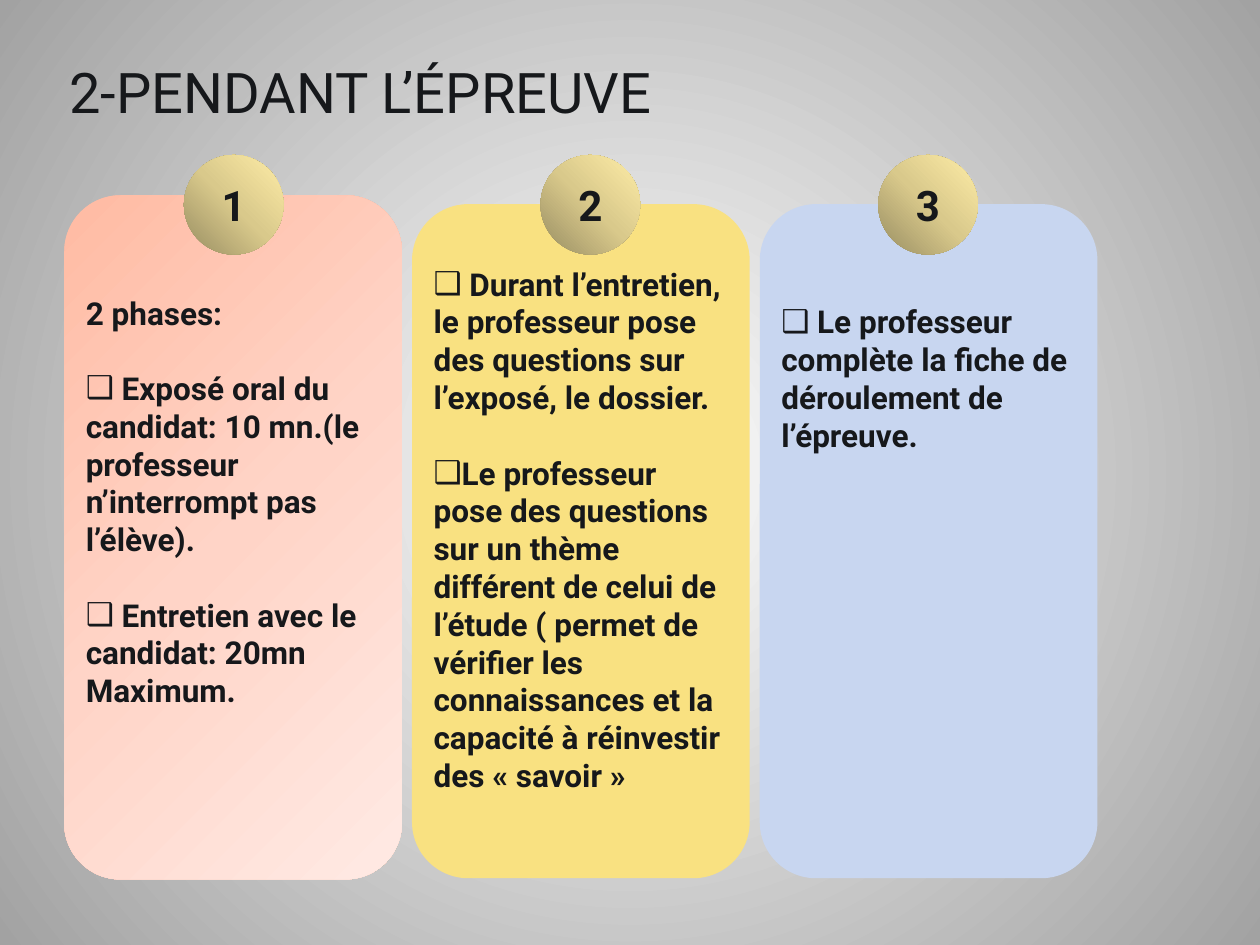
from dataclasses import dataclass
from lxml.etree import SubElement as Sub
from pptx import Presentation
from pptx.dml.color import RGBColor as Rgb
from pptx.enum.shapes import MSO_SHAPE as Kind
from pptx.enum.text import MSO_ANCHOR as Anchor, MSO_AUTO_SIZE as Fit, PP_ALIGN as Align
from pptx.oxml import parse_xml as to_xml
from pptx.oxml.ns import nsdecls, qn
from pptx.util import Inches, Pt


@dataclass(frozen=True)
class Theme:
    font: str = "Roboto"
    ink: str = "16181B"
    pink: tuple = ((0, "FFBBA3"), (50, "FFD4C7"), (100, "FFEAE4"))
    gold: tuple = ((0, "988D62"), (50, "D9C98B"), (100, "FFEDA7"))
    back: tuple = ((0, "FFFFFF", 100), (100, "A2A2A2", 59))
    sand: str = "F9E181"
    blue: str = "C8D6F0"
    head: float = 32
    mark: float = 24
    body: float = 18
    gap: float = 21.5


class Deck:
    """Holds the theme and the current slide, and draws each kind of element."""

    def __init__(self, theme):
        self.theme = theme
        self.prs = Presentation()
        self.prs.slide_width, self.prs.slide_height = Inches(10), Inches(7.5)
        self.slide = self.prs.slides.add_slide(self.prs.slide_layouts[5])

    def blend(self, fill, root, stops, angle=None):
        fill.background()
        grad = to_xml(f'<a:gradFill {nsdecls("a")} rotWithShape="1"><a:gsLst/></a:gradFill>')
        for spot, color, *alpha in stops:
            stop = Sub(grad[0], qn("a:gs"), pos=str(spot * 1000))
            tint = Sub(stop, qn("a:srgbClr"), val=color)
            if alpha and alpha[0] < 100:
                Sub(tint, qn("a:alpha"), val=str(alpha[0] * 1000))
        if angle is None:
            ring = Sub(grad, qn("a:path"), path="circle")
            Sub(ring, qn("a:fillToRect"), **dict.fromkeys("ltrb", "50000"))
        else:
            Sub(grad, qn("a:lin"), ang=str(angle * 60000), scaled="0")
        bare = root.find(".//" + qn("a:noFill"))
        bare.getparent().replace(bare, grad)

    def back(self):
        self.blend(self.slide.background.fill, self.slide.element, self.theme.back)

    def run(self, para, text, size, bold=True):
        run = para.add_run()
        run.text = text
        font = run.font
        font.name, font.size, font.bold = self.theme.font, Pt(size), bold
        font.color.rgb = Rgb.from_string(self.theme.ink)

    def title(self, text, box):
        shape = self.slide.shapes.title
        shape.left, shape.top, shape.width, shape.height = map(Inches, box)
        frame = shape.text_frame
        frame.auto_size, frame.word_wrap = Fit.NONE, True
        frame.vertical_anchor = Anchor.BOTTOM
        frame.margin_left = frame.margin_right = Inches(0.05)
        frame.margin_top = frame.margin_bottom = 0
        para = frame.paragraphs[0]
        para.alignment = Align.LEFT
        self.run(para, text, self.theme.head, False)

    def shape(self, kind, box, fill, angle):
        shape = self.slide.shapes.add_shape(kind, *map(Inches, box))
        shape.shadow.inherit = False
        if isinstance(fill, str):
            shape.fill.solid()
            shape.fill.fore_color.rgb = Rgb.from_string(fill)
        else:
            self.blend(shape.fill, shape.element, fill, angle)
        shape.line.fill.background()
        shape.text_frame.word_wrap = True
        return shape.text_frame

    def card(self, box, fill, inset, lines):
        frame = self.shape(Kind.ROUNDED_RECTANGLE, box, fill, 45)
        frame.vertical_anchor = Anchor.TOP
        frame.margin_left = frame.margin_right = Inches(0.04)
        frame.margin_top, frame.margin_bottom = Inches(inset), Inches(0.05)
        for i, (sign, text) in enumerate(lines):
            para = frame.add_paragraph() if i else frame.paragraphs[0]
            para.alignment = Align.LEFT
            if i:
                para.space_before = Pt(self.theme.gap)
            if sign:
                props = para._p.get_or_add_pPr()
                Sub(props, qn("a:buFont"), typeface=self.theme.font)
                Sub(props, qn("a:buChar"), char=sign)
            self.run(para, text, self.theme.body)

    def badge(self, left, text):
        frame = self.shape(Kind.OVAL, (left, 1.23, 0.79, 0.79), self.theme.gold, 315)
        frame.vertical_anchor = Anchor.MIDDLE
        para = frame.paragraphs[0]
        para.alignment = Align.CENTER
        self.run(para, text, self.theme.mark)


def main():
    theme = Theme()
    deck = Deck(theme)
    deck.back()
    deck.title("2-PENDANT L’ÉPREUVE", (0.5, 0.35, 7.92, 0.64))
    box = "❑"
    cards = [
        (1.55, 5.43, theme.pink, 0.65, 1.46, [
            ("", "2 phases:"),
            (box, " Exposé oral du candidat: 10 mn.(le professeur n’interrompt pas l’élève)."),
            (box, " Entretien avec le candidat: 20mn Maximum."),
        ]),
        (1.62, 5.35, theme.sand, 0.35, 4.29, [
            (box, " Durant l’entretien, le professeur pose des questions sur l’exposé, le dossier."),
            (box, "Le professeur pose des questions sur un thème différent de celui de l’étude "
                  "( permet de vérifier les connaissances et la capacité à réinvestir "
                  "des « savoir »"),
        ]),
        (1.62, 5.35, theme.blue, 0.65, 6.97, [
            (box, " Le professeur complète la fiche de déroulement de l’épreuve."),
        ]),
    ]
    for i, (top, high, fill, inset, spot, lines) in enumerate(cards):
        deck.card((0.51 + 2.76 * i, top, 2.68, high), fill, inset, lines)
        deck.badge(spot, str(i + 1))
    deck.prs.save("out.pptx")


if __name__ == "__main__":
    main()
